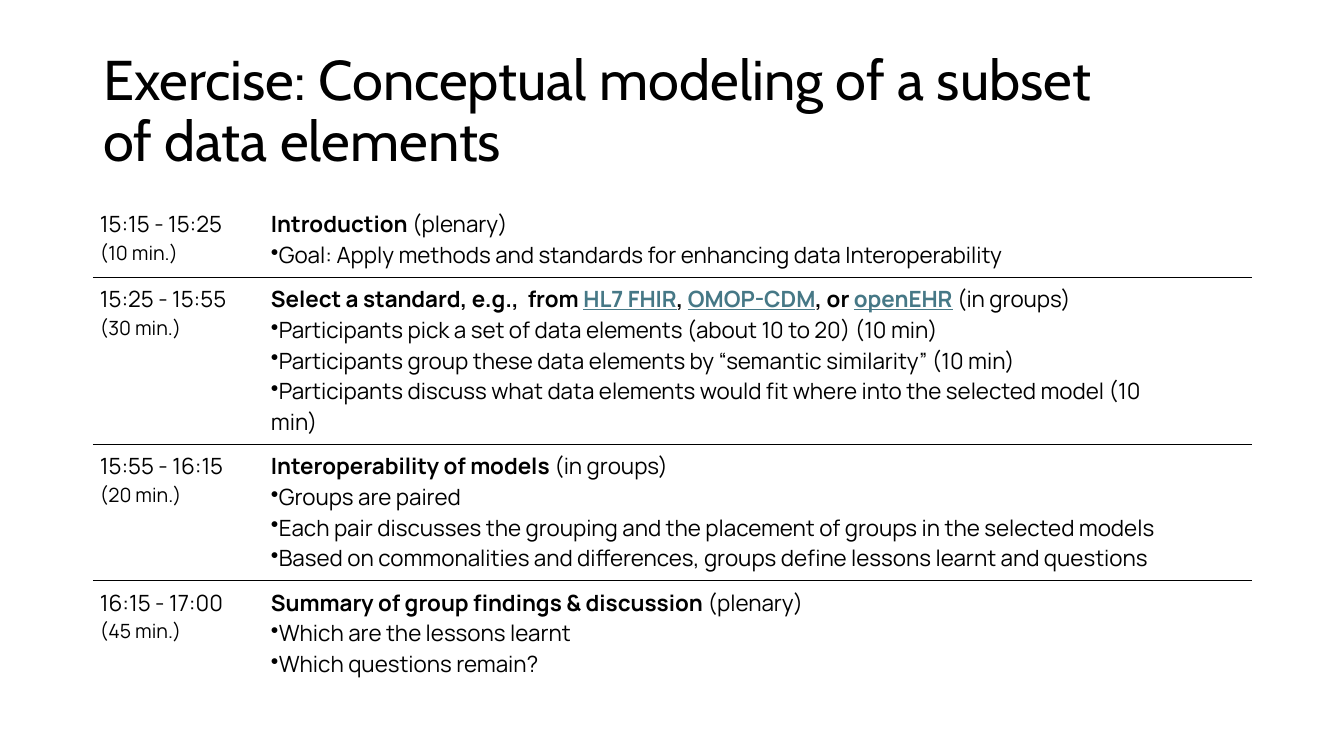
from dataclasses import dataclass

from pptx import Presentation
from pptx import util as u
from pptx.dml import color as dml
from pptx.enum import text as txt
from pptx.oxml import ns, xmlchemy as xc


@dataclass(frozen=True)
class Theme:
    ink: str = "000000"
    link: str = "467886"
    head: str = "Cabin"
    body: str = "Manrope"
    title: int = 40
    main: int = 16
    small: int = 14
    rule: int = 1


THEME = Theme()
SCALE = 914400 / 100.8
COLS = [171, 928, 60]
ROWS = [75, 167, 136, 108]

PLAN = [
    ("15:15 - 15:25", "(10 min.)",
     [("Introduction", "bold"), (" (plenary)", "plain")],
     ["Goal: Apply methods and standards for enhancing data Interoperability"]),
    ("15:25 - 15:55", "(30 min.)",
     [("Select a standard, e.g.,  from ", "bold"), ("HL7 FHIR", "link"),
      (", ", "bold"), ("OMOP-CDM", "link"), (", or ", "bold"),
      ("openEHR", "link"), (" ", "bold"), ("(in groups)", "plain")],
     ["Participants pick a set of data elements (about 10 to 20) (10 min)",
      "Participants group these data elements by “semantic similarity” (10 min)",
      "Participants discuss what data elements would fit where into the selected model (10 min)"]),
    ("15:55 - 16:15", "(20 min.)",
     [("Interoperability of models", "bold"), (" (in groups)", "plain")],
     ["Groups are paired",
      "Each pair discusses the grouping and the placement of groups in the selected models",
      "Based on commonalities and differences, groups define lessons learnt and questions"]),
    ("16:15 - 17:00", "(45 min.)",
     [("Summary of group findings & discussion ", "bold"), ("(plenary)", "plain")],
     ["Which are the lessons learnt", "Which questions remain?"]),
]

LOOKS = {
    "plain": {},
    "bold": {"bold": True},
    "link": {"bold": True, "line": True, "color": THEME.link},
}


def px(n):
    return u.Emu(round(n * SCALE))


def write(para, words, size=THEME.main, face=THEME.body, color=THEME.ink,
          bold=False, line=False):
    run = para.add_run()
    run.text = words
    font = run.font
    font.size = u.Pt(size)
    font.name = face
    font.bold = bold
    font.underline = line
    font.color.rgb = dml.RGBColor.from_string(color)


def dot(para):
    props = para._p.get_or_add_pPr()
    props.set("marL", "0")
    props.set("indent", "0")
    mark = xc.OxmlElement("a:buChar")
    mark.set("char", "•")
    props.append(mark)


def edge(cell, side, shown):
    line = xc.OxmlElement(f"a:ln{side}")
    line.set("w", str(u.Pt(THEME.rule)))
    fill = xc.OxmlElement("a:solidFill" if shown else "a:noFill")
    if shown:
        tint = xc.OxmlElement("a:srgbClr")
        tint.set("val", THEME.ink)
        fill.append(tint)
    line.append(fill)
    cell._tc.get_or_add_tcPr().append(line)


class Deck:
    def __init__(self, theme, wide, high):
        self.theme = theme
        self.show = Presentation()
        self.show.slide_width = px(wide)
        self.show.slide_height = px(high)
        self.slide = self.show.slides.add_slide(self.show.slide_layouts[5])

    def title(self, lines, x, y, w, h):
        box = self.slide.shapes.title
        box.left, box.top, box.width, box.height = map(px, (x, y, w, h))
        frame = box.text_frame
        frame.word_wrap = True
        frame.auto_size = txt.MSO_AUTO_SIZE.NONE
        frame.vertical_anchor = txt.MSO_ANCHOR.MIDDLE
        para = frame.paragraphs[0]
        para.alignment = txt.PP_ALIGN.LEFT
        para.line_spacing = 0.9
        for i, words in enumerate(lines):
            if i:
                para.add_line_break()
            write(para, words, size=self.theme.title, face=self.theme.head)

    def agenda(self, plan, x, y, cols, rows):
        frame = self.slide.shapes.add_table(
            len(rows), len(cols), px(x), px(y), px(sum(cols)), px(sum(rows)))
        grid = frame.table
        grid.first_row = grid.horz_banding = False
        for col, wide in zip(grid.columns, cols):
            col.width = px(wide)
        for r, (row, high) in enumerate(zip(grid.rows, rows)):
            row.height = px(high)
            for cell in row.cells:
                self.dress(cell, r > 0, r < len(rows) - 1)
            self.entry(row.cells, *plan[r])

    def dress(self, cell, above, below):
        cell.margin_left = cell.margin_right = px(7)
        cell.margin_top = cell.margin_bottom = px(7)
        for side, shown in (("L", False), ("R", False), ("T", above), ("B", below)):
            edge(cell, side, shown)
        cell.fill.background()

    def entry(self, cells, time, span, head, points):
        when, what = cells[0].text_frame, cells[1].text_frame
        write(when.paragraphs[0], time)
        write(when.add_paragraph(), span, size=self.theme.small)
        for words, look in head:
            write(what.paragraphs[0], words, **LOOKS[look])
        for point in points:
            para = what.add_paragraph()
            dot(para)
            write(para, point)


def main():
    deck = Deck(THEME, 1344, 756)
    deck.title(["Exercise: Conceptual modeling of a subset", "of data elements"],
               93, 40, 1159, 146)
    deck.agenda(PLAN, 93, 202, COLS, ROWS)
    deck.show.save("out.pptx")


if __name__ == "__main__":
    main()
